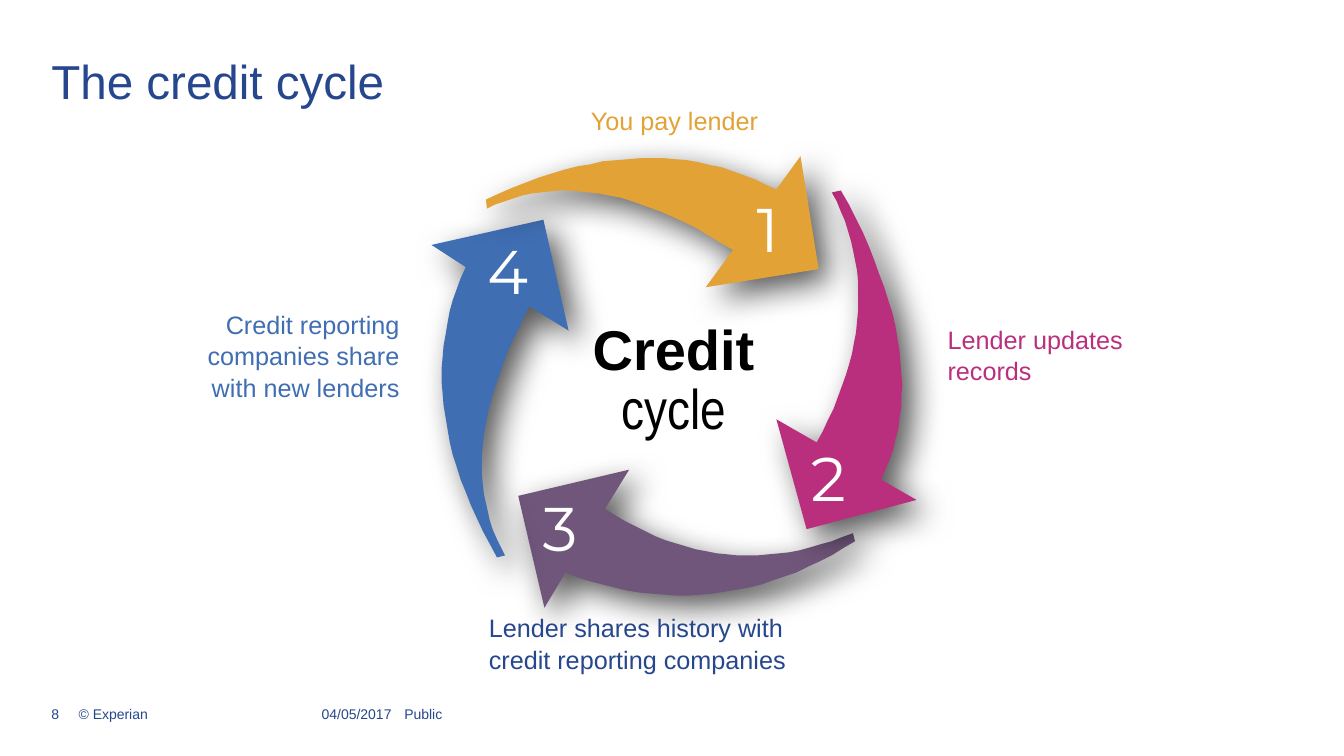
from lxml.etree import SubElement
from pptx import Presentation
from pptx.dml.color import RGBColor
from pptx.enum.text import MSO_ANCHOR as Anchor, PP_ALIGN as Align
from pptx.oxml.ns import qn
from pptx.util import Pt

PX = 9144
NAVY, GOLD, MAGENTA, PURPLE, BLUE = "26478D", "E2A235", "BA2F7D", "70567A", "406EB3"
WHITE, BLACK = "FFFFFF", "000000"
CURVE_STEPS = 24
INSETS = (10, 5, 10, 5)
NO_INSETS = (0, 0, 0, 0)

TITLE = ("The credit cycle", (51, 58, 609, 110))
FOOTERS = [
    ("8\t© Experian", (51, 700, 208, 24)),
    ("04/05/2017", (319, 700, 79, 24)),
    ("Public", (401, 700, 669, 24)),
]
FOOTER_TAB = 27

ARROWS = [
    {"color": PURPLE,
     "outer": [(561, 568), (707, 589), (848, 537)],
     "inner": [(846, 529), (721, 550), (600, 505)],
     "head": [(624, 466), (514, 492), (540, 603)]},
    {"color": MAGENTA,
     "outer": [(874, 476), (892, 347), (834, 189)],
     "inner": [(825, 191), (851, 309), (810, 439)],
     "head": [(770, 416), (800, 525), (909, 496)]},
    {"color": BLUE,
     "outer": [(462, 265), (440, 402), (493, 553)],
     "inner": [(501, 551), (479, 441), (525, 304)],
     "head": [(564, 328), (539, 218), (428, 243)]},
    {"color": GOLD,
     "outer": [(770, 188), (635, 157), (482, 198)],
     "inner": [(483, 207), (594, 192), (727, 248)],
     "head": [(700, 285), (812, 267), (794, 155)]},
]
LABELS = [
    (["You pay lender"], (551, 105, 236, 34), GOLD, Align.CENTER, 0.8),
    (["Lender updates", "records"], (930, 315, 213, 70), MAGENTA, Align.LEFT, 1.05),
    (["Lender shares history with\vcredit reporting companies"],
     (475, 601, 386, 70), NAVY, Align.LEFT, 1.05),
    (["Credit reporting companies share", "with new lenders"],
     (194, 300, 212, 101), BLUE, Align.RIGHT, 1.05),
]
NUMBER_SIZE = (61, 84)
NUMBERS = [("1", (731, 185)), ("2", (791, 432)), ("3", (525, 481)), ("4", (473, 226))]
CENTER_BOX = (577, 313, 182, 131)
CENTER_WORDS = [("Credit", "Arial", True), ("cycle", "Arial Narrow", False)]


def rgb(color):
    return RGBColor.from_string(color)


def emu(lengths):
    return [length * PX for length in lengths]


def set_frame(frame, insets, wrap=True, anchor=Anchor.TOP):
    frame.margin_left, frame.margin_top, frame.margin_right, frame.margin_bottom = emu(insets)
    frame.word_wrap = wrap
    frame.vertical_anchor = anchor
    return frame


def add_frame(page, place, insets=INSETS, wrap=True, anchor=Anchor.TOP):
    return set_frame(page.shapes.add_textbox(*emu(place)).text_frame, insets, wrap, anchor)


def add_span(para, text, size, color, font="Arial", bold=False):
    for index, line in enumerate(text.split("\v")):
        if index:
            para.add_line_break()
        span = para.add_run()
        span.text = line
        span.font.name, span.font.size, span.font.bold = font, Pt(size), bold
        span.font.color.rgb = rgb(color)


def curve(points):
    """Sample the parabola that passes through three points."""
    start, middle, end = points
    for step in range(CURVE_STEPS + 1):
        t = step / CURVE_STEPS
        weights = (1 - t) * (1 - 2 * t), 4 * t * (1 - t), t * (2 * t - 1)
        yield tuple(sum(weight * value for weight, value in zip(weights, axis))
                    for axis in zip(start, middle, end))


def add_shadow(shape):
    effects = SubElement(shape._element.spPr, qn("a:effectLst"))
    shadow = SubElement(effects, qn("a:outerShdw"), blurRad=str(Pt(23)), dist=str(Pt(11)),
                        dir="2700000", algn="tl", rotWithShape="0")
    tint = SubElement(shadow, qn("a:srgbClr"), val=BLACK)
    SubElement(tint, qn("a:alpha"), val="65000")


def add_arrow(page, arrow):
    outline = [*curve(arrow["outer"]), *curve(arrow["inner"]), *arrow["head"]]
    builder = page.shapes.build_freeform(*outline[0], scale=PX)
    builder.add_line_segments(outline[1:], close=True)
    shape = builder.convert_to_shape()
    shape.fill.solid()
    shape.fill.fore_color.rgb = rgb(arrow["color"])
    shape.line.fill.background()
    add_shadow(shape)


def add_label(page, lines, place, color, align, spacing):
    frame = add_frame(page, place)
    for index, line in enumerate(lines):
        para = frame.add_paragraph() if index else frame.paragraphs[0]
        para.alignment, para.line_spacing = align, spacing
        add_span(para, line, 18, color)


def add_footer(page, text, place):
    para = add_frame(page, place, NO_INSETS).paragraphs[0]
    if "\t" in text:
        tabs = SubElement(para._p.get_or_add_pPr(), qn("a:tabLst"))
        SubElement(tabs, qn("a:tab"), pos=str(FOOTER_TAB * PX), algn="l")
    add_span(para, text, 10, NAVY)


def add_title(page):
    text, place = TITLE
    title = page.shapes.title
    title.left, title.top, title.width, title.height = emu(place)
    para = set_frame(title.text_frame, NO_INSETS).paragraphs[0]
    para.alignment, para.line_spacing = Align.LEFT, 0.9
    add_span(para, text, 34, NAVY)


def add_center(page):
    para = add_frame(page, CENTER_BOX, wrap=False, anchor=Anchor.MIDDLE).paragraphs[0]
    para.alignment, para.line_spacing = Align.CENTER, Pt(42)
    for index, (word, font, bold) in enumerate(CENTER_WORDS):
        if index:
            para.add_line_break()
        add_span(para, word, 40, BLACK, font, bold)


def main():
    deck = Presentation()
    deck.slide_width, deck.slide_height = emu((1333, 750))
    page = deck.slides.add_slide(deck.slide_layouts[5])
    add_title(page)
    for footer in FOOTERS:
        add_footer(page, *footer)
    for arrow in ARROWS:
        add_arrow(page, arrow)
    for label in LABELS:
        add_label(page, *label)
    for number, corner in NUMBERS:
        para = add_frame(page, corner + NUMBER_SIZE, wrap=False).paragraphs[0]
        para.alignment = Align.CENTER
        add_span(para, number, 44, WHITE, "Montserrat")
    add_center(page)
    deck.save("out.pptx")


if __name__ == "__main__":
    main()
